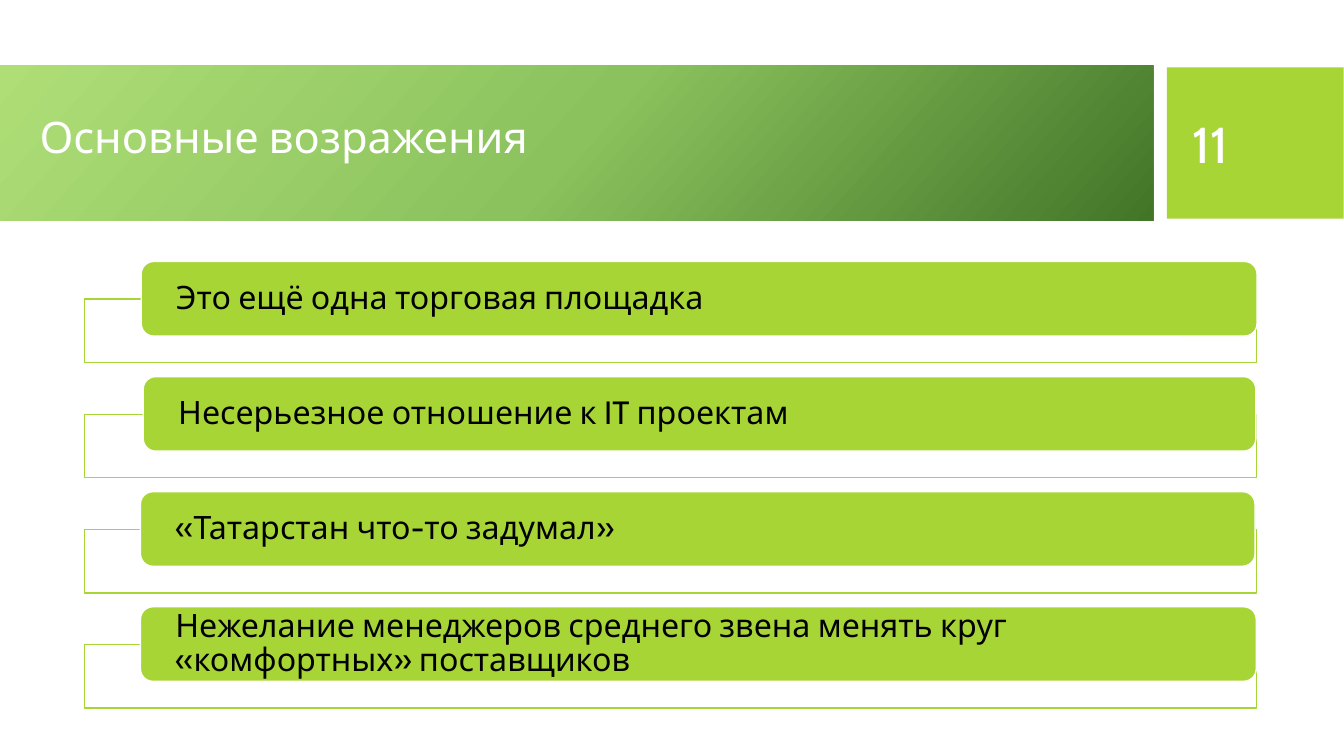
"""Build the slide listing the main objections."""
import copy
from dataclasses import dataclass

import pptx
import pptx.dml.color
import pptx.enum.shapes
import pptx.enum.text
import pptx.oxml.ns
import pptx.util
from pptx.util import Cm


@dataclass(frozen=True)
class Theme:
    font: str = "Cabin"
    lime: str = "A7D535"
    white: str = "FFFFFF"
    black: str = "000000"
    gradient: tuple = ((0, "AFDE77"), (0.5, "8BC25D"), (1, "437528"))
    title_size: int = 31
    number_size: int = 36
    objection_size: int = 23


theme = Theme()
rgb = pptx.dml.color.RGBColor.from_string
kinds = pptx.enum.shapes.MSO_SHAPE

deck = pptx.Presentation()
deck.slide_width, deck.slide_height = Cm(33.87), Cm(19.05)
slide = deck.slides.add_slide(deck.slide_layouts[6])


def add_block(kind, left, top, width, height, fill, line=None):
    block = slide.shapes.add_shape(kind, Cm(left), Cm(top), Cm(width), Cm(height))
    block.shadow.inherit = False
    block.fill.solid()
    block.fill.fore_color.rgb = rgb(fill)
    if line:
        block.line.color.rgb = rgb(line)
        block.line.width = pptx.util.Pt(1)
    else:
        block.line.fill.background()
    return block


def write(block, text, size, color, inset, spacing=1.0):
    frame = block.text_frame
    frame.word_wrap = True
    frame.vertical_anchor = pptx.enum.text.MSO_ANCHOR.MIDDLE
    frame.margin_left = frame.margin_right = Cm(inset)
    frame.margin_top = frame.margin_bottom = 0
    frame.text = text
    paragraph = frame.paragraphs[0]
    paragraph.alignment = pptx.enum.text.PP_ALIGN.LEFT
    paragraph.line_spacing = spacing
    font = paragraph.runs[0].font
    font.name = theme.font
    font.size = pptx.util.Pt(size)
    font.color.rgb = rgb(color)


number = add_block(kinds.RECTANGLE, 29.41, 1.7, 4.45, 3.81, theme.lime)
write(number, "11", theme.number_size, theme.white, 0.64)

title = add_block(kinds.RECTANGLE, 0, 1.65, 29.06, 3.91, theme.white)
title.fill.gradient()
title.fill.gradient_angle = 318
stop_list = title.element.spPr.find(".//" + pptx.oxml.ns.qn("a:gsLst"))
stop_list.insert(1, copy.deepcopy(stop_list[0]))
for stop, (position, color) in zip(title.fill.gradient_stops, theme.gradient):
    stop.position = position
    stop.color.rgb = rgb(color)
write(title, "Основные возражения", theme.title_size, theme.white, 1.0, 0.9)
title.text_frame.margin_bottom = Cm(0.2)

objections = [
    ("Это ещё одна торговая площадка", 3.56, 28.12),
    ("Несерьезное отношение к IT проектам", 3.61, 28.04),
    ("«Татарстан что-то задумал»", 3.54, 28.09),
    ("Нежелание менеджеров среднего звена менять круг «комфортных» поставщиков", 3.54, 28.12),
]
first_top, step = 6.59, 2.9
for index, (objection, left, width) in enumerate(objections):
    top = first_top + index * step
    add_block(kinds.RECTANGLE, 2.13, top + 0.95, 29.54, 1.6, theme.white, theme.lime)
    card = add_block(kinds.ROUNDED_RECTANGLE, left, top, width, 1.88, theme.lime, theme.white)
    write(card, objection, theme.objection_size, theme.black, 0.79, 0.9)

deck.save("out.pptx")
